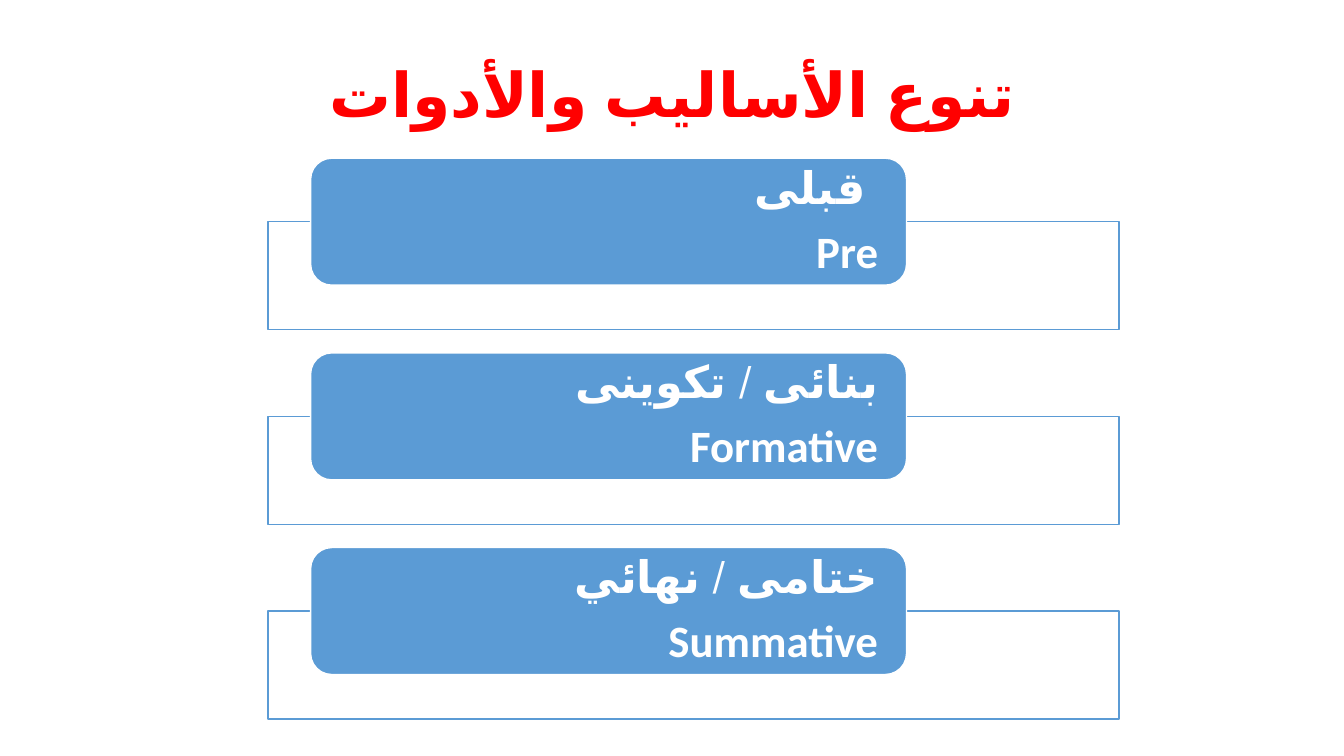
from dataclasses import dataclass

from lxml.etree import SubElement
from pptx import Presentation
from pptx.dml.color import RGBColor
from pptx.enum.lang import MSO_LANGUAGE_ID
from pptx.enum.shapes import MSO_SHAPE
from pptx.enum.text import MSO_ANCHOR, PP_ALIGN
from pptx.oxml.ns import qn
from pptx.util import Inches, Pt


@dataclass(frozen=True)
class Theme:
    font: str = "Calibri"
    title_color: RGBColor = RGBColor(0xFF, 0x00, 0x00)
    accent: RGBColor = RGBColor(0x5B, 0x9B, 0xD5)
    white: RGBColor = RGBColor(0xFF, 0xFF, 0xFF)
    title_size: Pt = Pt(44)
    label_size: Pt = Pt(32)
    label_gap: Pt = Pt(11.2)
    outline: Pt = Pt(1)


THEME = Theme()
WIDTH, HEIGHT = Inches(13.33), Inches(7.5)
STAGE_PITCH = 25.75
STAGES = [
    ("قبلى ", "Pre"),
    ("بنائى / تكوينى", "Formative"),
    ("ختامى / نهائي", "Summative"),
]


def place(left, top, width, height):
    return (
        int(WIDTH * left / 100),
        int(HEIGHT * top / 100),
        int(WIDTH * width / 100),
        int(HEIGHT * height / 100),
    )


def write(frame, lines, size, color, align, gap=Pt(0)):
    frame.word_wrap = True
    frame.vertical_anchor = MSO_ANCHOR.MIDDLE
    for index, line in enumerate(lines):
        para = frame.add_paragraph() if index else frame.paragraphs[0]
        para.alignment = align
        para.line_spacing = 0.9
        para.space_after = gap
        para.font.name = THEME.font
        para.font.size = size
        para.font.bold = True
        para.font.color.rgb = color
        span = para.add_run()
        span.text = line
        english = line.isascii()
        span.font.language_id = MSO_LANGUAGE_ID.ENGLISH_US if english else MSO_LANGUAGE_ID.ARABIC_EGYPT


def add_title(page, text):
    box = page.shapes.add_textbox(*place(6.9, 3.2, 86.27, 19.33))
    write(box.text_frame, [text], THEME.title_size, THEME.title_color, PP_ALIGN.CENTER)


def add_panel(page, kind, area, fill, line):
    panel = page.shapes.add_shape(kind, *place(*area))
    panel.shadow.inherit = False
    panel.fill.solid()
    panel.fill.fore_color.rgb = fill
    panel.line.color.rgb = line
    panel.line.width = THEME.outline
    return panel


def set_opacity(shape, percent):
    color = shape.element.spPr.find(qn("a:solidFill")).find(qn("a:srgbClr"))
    SubElement(color, qn("a:alpha")).set("val", str(percent * 1000))


def add_stage(page, row, lines):
    top = 20.93 + row * STAGE_PITCH
    frame_area = (19.95, top + 8.4, 63.32, 14.27)
    back = add_panel(page, MSO_SHAPE.RECTANGLE, frame_area, THEME.white, THEME.accent)
    set_opacity(back, 90)
    label_area = (23.11, top, 44.34, 16.8)
    label = add_panel(page, MSO_SHAPE.ROUNDED_RECTANGLE, label_area, THEME.accent, THEME.white)
    frame = label.text_frame
    frame.margin_left = frame.margin_right = Inches(0.22)
    frame.margin_top = frame.margin_bottom = 0
    write(frame, lines, THEME.label_size, THEME.white, PP_ALIGN.RIGHT, THEME.label_gap)


def main():
    deck = Presentation()
    deck.slide_width, deck.slide_height = WIDTH, HEIGHT
    page = deck.slides.add_slide(deck.slide_layouts[6])
    add_title(page, "تنوع الأساليب والأدوات")
    for row, lines in enumerate(STAGES):
        add_stage(page, row, lines)
    deck.save("out.pptx")


if __name__ == "__main__":
    main()
